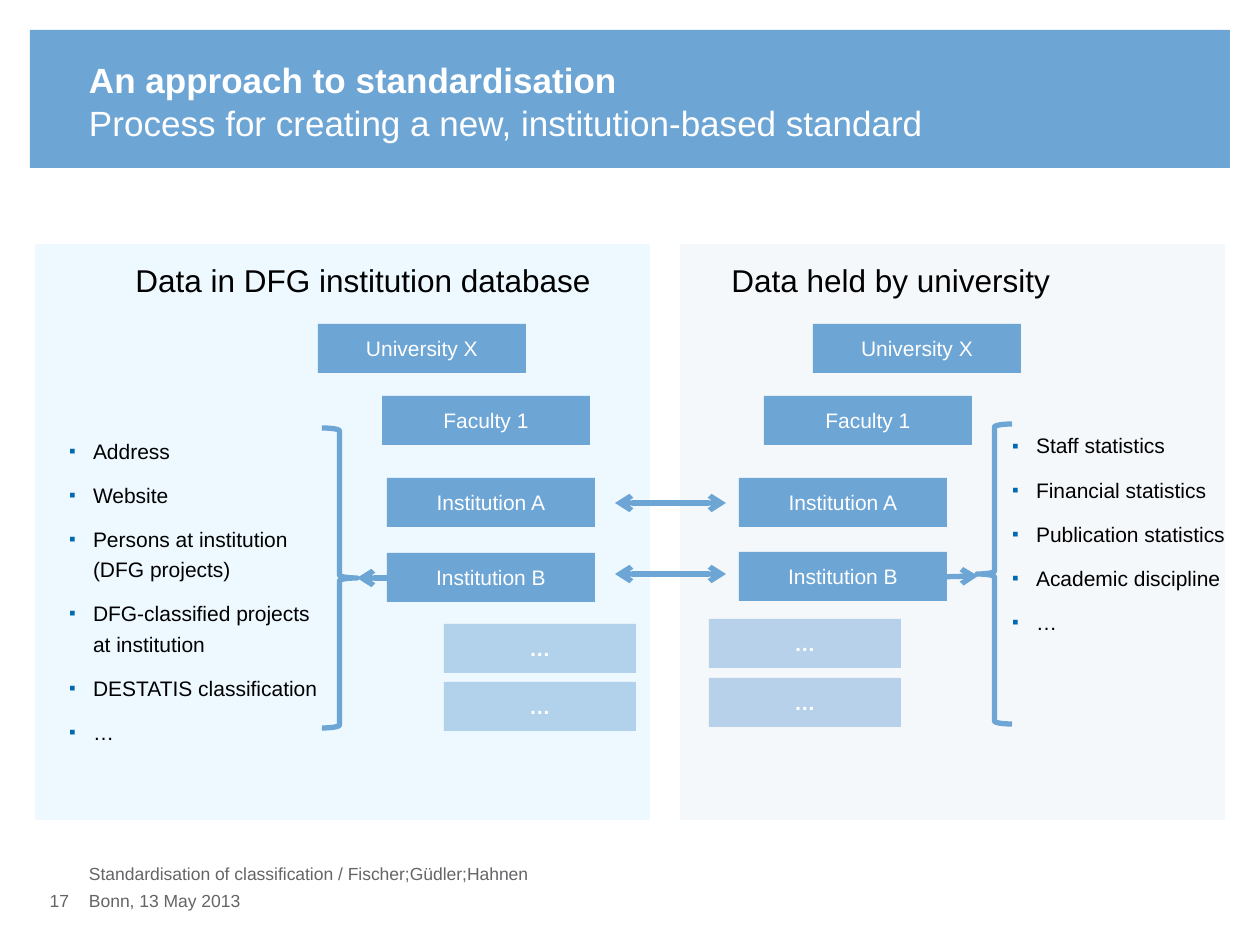
from lxml import etree
from pptx import Presentation, util as u
from pptx.dml.color import RGBColor
from pptx.enum import shapes as sh, text as tx
from pptx.oxml.ns import qn

SCALE = 914400 / 126
BLUE = RGBColor(0x6D, 0xA5, 0xD5)
ICE = RGBColor(0xBC, 0xE4, 0xFF)
MIST = RGBColor(0xD9, 0xE7, 0xF3)
WHITE = RGBColor(0xFF, 0xFF, 0xFF)
BLACK = RGBColor(0, 0, 0)
GREY = RGBColor(0x64, 0x65, 0x67)
LEFT, MID, RIGHT = tx.PP_ALIGN.LEFT, tx.PP_ALIGN.CENTER, tx.PP_ALIGN.RIGHT


def emu(*px):
    return [u.Emu(round(v * SCALE)) for v in px]


def write(frame, lines, size, color, bold=False, align=LEFT, inset=0, list_=False):
    form = dict(word_wrap=True, auto_size=tx.MSO_AUTO_SIZE.NONE,
                vertical_anchor=tx.MSO_ANCHOR.MIDDLE if align == MID else tx.MSO_ANCHOR.TOP,
                margin_left=u.Inches(inset), margin_right=u.Inches(inset),
                margin_top=u.Inches(inset / 2), margin_bottom=u.Inches(inset / 2))
    for key, val in form.items():
        setattr(frame, key, val)
    for i, line in enumerate(lines):
        para = frame.paragraphs[0] if i == 0 else frame.add_paragraph()
        para.alignment = align
        para.space_before = u.Pt(8 if i else 0)
        if list_:
            para.line_spacing = 1.2
            prop = para._p.get_or_add_pPr()
            prop.set("marL", str(emu(24)[0]))
            prop.set("indent", str(-emu(24)[0]))
            tint = etree.SubElement(prop, qn("a:buClr"))
            etree.SubElement(tint, qn("a:srgbClr"), val="0069AF")
            etree.SubElement(prop, qn("a:buSzPct"), val="90000")
            etree.SubElement(prop, qn("a:buFont"), typeface="Arial")
            etree.SubElement(prop, qn("a:buChar"), char="▪")
        run = para.add_run()
        run.text = line
        for key, val in dict(name="Arial", size=u.Pt(size), bold=bold).items():
            setattr(run.font, key, val)
        run.font.color.rgb = color


prs = Presentation()
prs.slide_width, prs.slide_height = emu(1260, 945)
slide = prs.slides.add_slide(prs.slide_layouts.get_by_name("Comparison"))
parts = slide.shapes
holds = {h.placeholder_format.idx: h for h in slide.placeholders}

# Title, subtitle and the two lists
head = dict(size=20, color=WHITE)
item = dict(size=12, color=BLACK, list_=True)
for idx, at, lines, fmt in [
    (0, (89, 58, 1091, 38), ["An approach to standardisation"], dict(head, bold=True)),
    (1, (89, 101, 1091, 38), ["Process for creating a new, institution-based standard"], head),
    (2, (69, 433, 263, 359),
     ["Address", "Website", "Persons at institution (DFG projects)",
      "DFG-classified projects at institution", "DESTATIS classification", "…"], item),
    (4, (1012, 428, 228, 261),
     ["Staff statistics", "Financial statistics", "Publication statistics",
      "Academic discipline", "…"], item),
]:
    hold = holds[idx]
    hold.left, hold.top, hold.width, hold.height = emu(*at)
    write(hold.text_frame, lines, **fmt)
spare = holds[3].element
spare.getparent().remove(spare)

# Banner and panels go behind the text, then the two trees of boxes
rects = [
    (30, 30, 1200, 138, BLUE, 100, ""),
    (35, 244, 615, 576, ICE, 26, ""),
    (680, 244, 545, 576, MIST, 26, ""),
]
names = ["University X", "Faculty 1", "Institution A", "Institution B"]
for spots in ([(318, 324), (382, 396), (387, 478), (387, 553)],
              [(813, 324), (764, 396), (739, 478), (739, 552)]):
    rects += [(x, y, 208, 49, BLUE, 100, name) for (x, y), name in zip(spots, names)]
for x, y in [(444, 624), (444, 682), (709, 619), (709, 678)]:
    rects.append((x, y, 192, 49, BLUE, 46, "…"))

for x, y, w, h, color, alpha, label in rects:
    box = parts.add_shape(sh.MSO_SHAPE.RECTANGLE, *emu(x, y, w, h))
    box.shadow.inherit = False
    box.fill.solid()
    box.fill.fore_color.rgb = color
    box.line.fill.background()
    if alpha < 100:
        tint = box.element.find(".//" + qn("a:srgbClr"))
        etree.SubElement(tint, qn("a:alpha"), val=str(alpha * 1000))
    if label:
        write(box.text_frame, [label], 12, WHITE, label == "…", MID, 0.1)
    else:
        parts.element.insert(2, box.element)

# Braces beside the lists
for x, y, turn in [(322, 428, 0), (977, 424, 180)]:
    brace = parts.add_shape(sh.MSO_SHAPE.RIGHT_BRACE, *emu(x, y, 35, 300))
    brace.shadow.inherit = False
    brace.rotation = turn
    brace.fill.background()
    brace.line.color.rgb = BLUE
    brace.line.width = u.Pt(3)

# Arrows to the braces and between the institutions
for x1, y1, x2, y2, ends in [
    (422, 578, 357, 578, ["tailEnd"]),
    (934, 577, 978, 576, ["tailEnd"]),
    (615, 503, 726, 503, ["headEnd", "tailEnd"]),
    (615, 574, 726, 574, ["headEnd", "tailEnd"]),
]:
    link = parts.add_connector(sh.MSO_CONNECTOR.STRAIGHT, *emu(x1, y1, x2, y2))
    link.line.color.rgb = BLUE
    link.line.width = u.Pt(3)
    for end in ends:
        etree.SubElement(link.line._get_or_add_ln(), qn("a:" + end), type="arrow")
    etree.SubElement(link.element.spPr, qn("a:effectLst"))

# Panel headings and footer
foot = dict(size=10, color=GREY)
topic = dict(size=18, color=BLACK, inset=0.1)
for at, line, fmt in [
    ((123, 255, 486, 50), "Data in DFG institution database", topic),
    ((719, 255, 456, 50), "Data held by university", topic),
    ((89, 863, 876, 28), "Standardisation of classification / Fischer;Güdler;Hahnen", foot),
    ((89, 890, 876, 34), "Bonn, 13 May 2013", foot),
    ((15, 890, 54, 34), "17", dict(foot, align=RIGHT)),
]:
    write(parts.add_textbox(*emu(*at)).text_frame, [line], **fmt)

prs.save("out.pptx")
